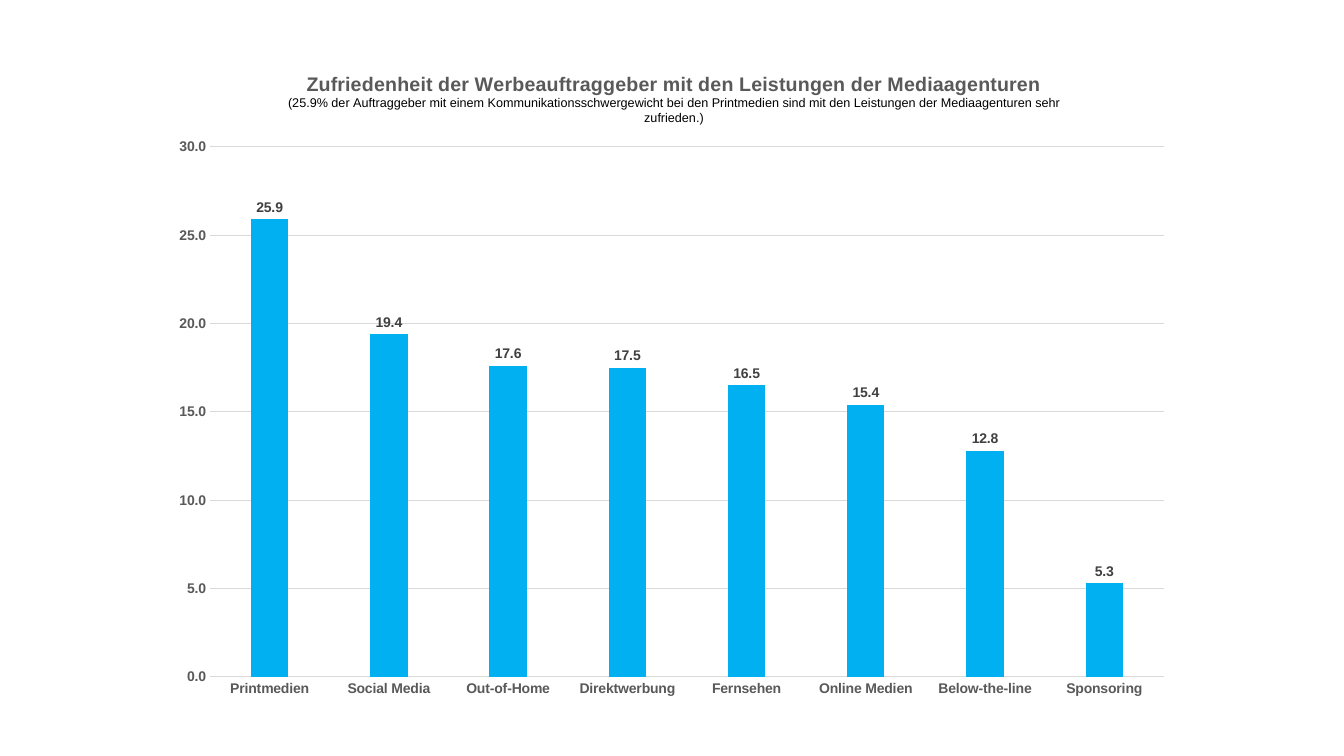
from typing import NamedTuple

from lxml.etree import SubElement
from pptx import Presentation
from pptx.chart.data import CategoryChartData as ChartData
from pptx.dml.color import RGBColor as Rgb
from pptx.enum.chart import XL_CHART_TYPE as Kind
from pptx.enum.chart import XL_LABEL_POSITION as Place
from pptx.enum.chart import XL_TICK_MARK as Tick
from pptx.oxml.ns import qn
from pptx.util import Emu, Pt

SCALE = 12192000 / 1344
GREY, RULE, CYAN, DARK, BLACK = "595959", "D9D9D9", "00B0F0", "404040", "000000"


class Box(NamedTuple):
    left: int
    top: int
    width: int
    height: int


class Line(NamedTuple):
    text: str
    size: int
    bold: bool
    hue: str


class Bar(NamedTuple):
    name: str
    value: float


PAGE = Box(0, 0, 1344, 756)
FRAME = Box(159, 46, 1025, 663)
PLOT = Box(210, 147, 954, 530)
HEAD = Box(285, 69, 0, 0)

TITLE = [
    Line("Zufriedenheit der Werbeauftraggeber mit den Leistungen der Mediaagenturen",
         14, True, GREY),
    Line("(25.9% der Auftraggeber mit einem Kommunikationsschwergewicht bei den "
         "Printmedien sind mit den Leistungen der Mediaagenturen sehr zufrieden.)",
         9, False, BLACK),
]
BARS = [
    Bar("Printmedien", 25.9),
    Bar("Social Media", 19.4),
    Bar("Out-of-Home", 17.6),
    Bar("Direktwerbung", 17.5),
    Bar("Fernsehen", 16.5),
    Bar("Online Medien", 15.4),
    Bar("Below-the-line", 12.8),
    Bar("Sponsoring", 5.3),
]


def px(count: int) -> Emu:
    return Emu(round(count * SCALE))


def color(code: str) -> Rgb:
    return Rgb.from_string(code)


def assign(target, values: dict) -> None:
    for key, value in values.items():
        setattr(target, key, value)


def style(font, size: int, bold: bool, hue: str) -> None:
    assign(font, {"name": "Arial", "size": Pt(size), "bold": bold})
    font.color.rgb = color(hue)


def rule(line) -> None:
    line.color.rgb = color(RULE)
    line.width = Pt(0.75)


def pin(layout, box: Box, inner: bool) -> None:
    """Fix a chart part at a place given in slide pixels."""
    manual = SubElement(layout, qn("c:manualLayout"))
    parts = {"layoutTarget": "inner"} if inner else {}
    parts |= {"xMode": "edge", "yMode": "edge",
              "x": (box.left - FRAME.left) / FRAME.width,
              "y": (box.top - FRAME.top) / FRAME.height}
    if inner:
        parts |= {"w": box.width / FRAME.width, "h": box.height / FRAME.height}
    for tag, value in parts.items():
        SubElement(manual, qn(f"c:{tag}")).set("val", str(value))


def add_title(chart) -> None:
    title = chart.chart_title
    frame = title.text_frame
    for i, line in enumerate(TITLE):
        para = frame.add_paragraph() if i else frame.paragraphs[0]
        run = para.add_run()
        run.text = line.text
        style(run.font, line.size, line.bold, line.hue)
    title.include_in_layout = False
    root = title._element
    layout = root.find(qn("c:layout"))
    if layout is None:
        layout = SubElement(root, qn("c:layout"))
        root.find(qn("c:tx")).addnext(layout)
    pin(layout, HEAD, False)


def set_axes(chart) -> None:
    for axis in (chart.category_axis, chart.value_axis):
        assign(axis, {"major_tick_mark": Tick.NONE, "minor_tick_mark": Tick.NONE})
        style(axis.tick_labels.font, 10, True, GREY)
    rule(chart.category_axis.format.line)
    scale = chart.value_axis
    assign(scale, {"minimum_scale": 0, "maximum_scale": 30, "major_unit": 5})
    assign(scale.tick_labels, {"number_format": "0.0",
                               "number_format_is_linked": False})
    scale.format.line.fill.background()
    rule(scale.major_gridlines.format.line)


def set_bars(plot) -> None:
    assign(plot, {"gap_width": 219, "overlap": -27, "vary_by_categories": False,
                  "has_data_labels": True})
    labels = plot.data_labels
    assign(labels, {"show_value": True, "position": Place.OUTSIDE_END,
                    "number_format": "0.0", "number_format_is_linked": False})
    style(labels.font, 10, True, DARK)
    fill = plot.series[0].format.fill
    fill.solid()
    fill.fore_color.rgb = color(CYAN)


def add_bars(slide) -> None:
    data = ChartData(number_format="0.0")
    data.categories = [bar.name for bar in BARS]
    data.add_series("Series 1", [bar.value for bar in BARS])
    chart = slide.shapes.add_chart(
        Kind.COLUMN_CLUSTERED, *map(px, FRAME), data).chart
    chart.has_legend = False
    assign(chart.font, {"name": "Calibri", "size": Pt(10)})
    add_title(chart)
    set_axes(chart)
    set_bars(chart.plots[0])
    area = chart._chartSpace.chart.plotArea
    layout = area.find(qn("c:layout"))
    if layout is None:
        layout = SubElement(area, qn("c:layout"))
        area.insert(0, layout)
    pin(layout, PLOT, True)


def main() -> None:
    deck = Presentation()
    assign(deck, {"slide_width": px(PAGE.width), "slide_height": px(PAGE.height)})
    add_bars(deck.slides.add_slide(deck.slide_layouts[6]))
    deck.save("out.pptx")


if __name__ == "__main__":
    main()
